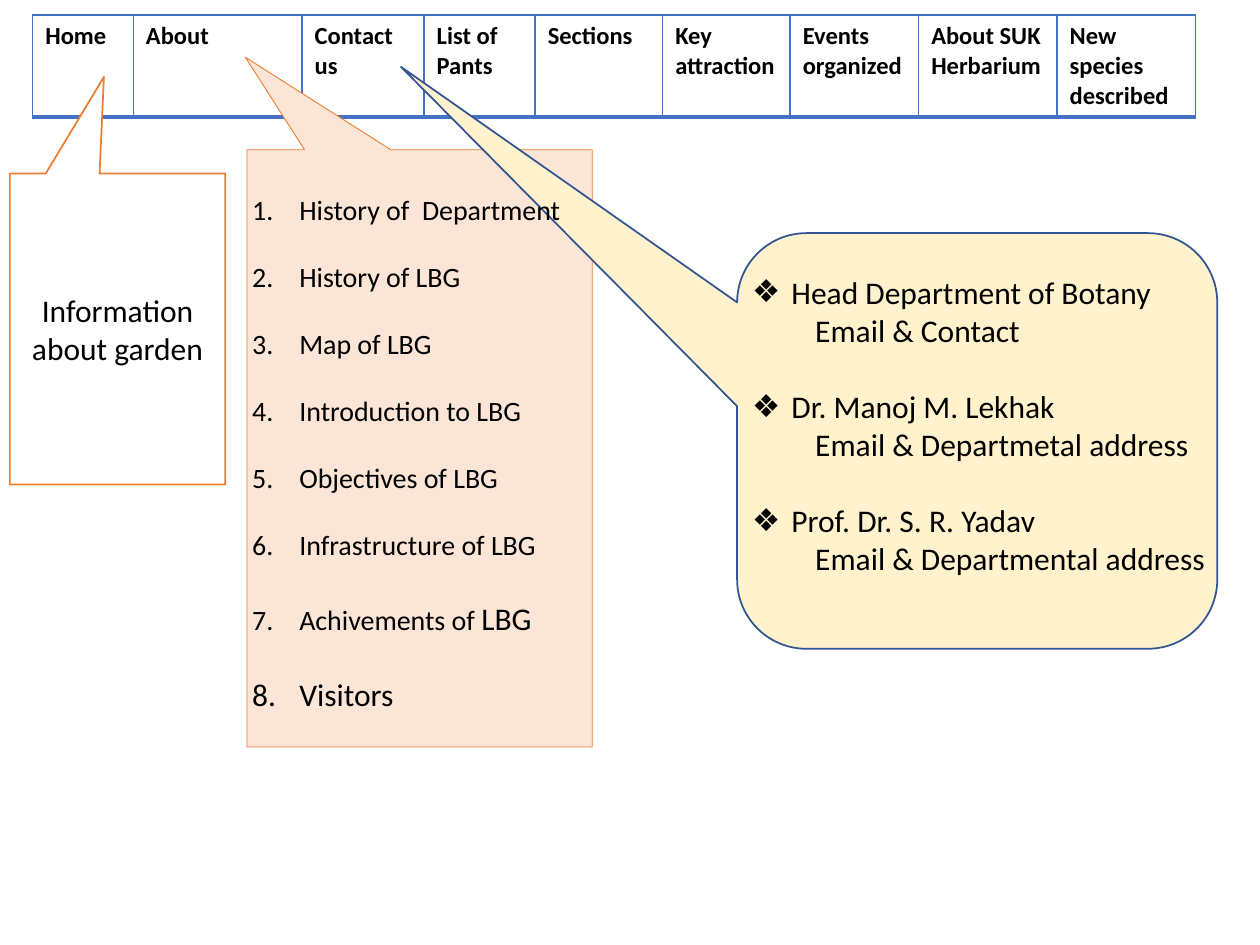
import lxml.etree
import pptx
import pptx.dml.color
import pptx.enum.shapes
import pptx.enum.text
import pptx.oxml.ns
import pptx.util

Cm, Pt = pptx.util.Cm, pptx.util.Pt
RGB = pptx.dml.color.RGBColor.from_string
qn = pptx.oxml.ns.qn
SHAPE = pptx.enum.shapes.MSO_SHAPE
ALIGN = pptx.enum.text.PP_ALIGN
ANCHOR = pptx.enum.text.MSO_ANCHOR

THEME = {
    "font": "Calibri", "text": "000000", "grid": "4472C4",
    "menu": 14, "list": 16, "body": 18,
}

# Menu entry and column width in cm
MENU = [
    ("Home", 2.03), ("About", 3.4), ("Contact us", 2.46),
    ("List of Pants", 2.24), ("Sections", 2.57), ("Key attraction", 2.57),
    ("Events organized", 2.59), ("About SUK Herbarium", 2.79),
    ("New species described", 2.79),
]
MENU_AT = (0.66, 0.3)
MENU_HEIGHT = 2.03

# Each entry is a list of (text, size) runs
ABOUT = [[(text, THEME["list"])] for text in (
    "History of  Department", "History of LBG", "Map of LBG",
    "Introduction to LBG", "Objectives of LBG", "Infrastructure of LBG")]
ABOUT += [
    [("Achivements of ", THEME["list"]), ("LBG", THEME["body"])],
    [("Visitors", THEME["body"])],
]
CONTACTS = [
    ("Head Department of Botany", "Email & Contact"),
    ("Dr. Manoj M. Lekhak", "Email & Departmetal address"),
    ("Prof. Dr. S. R. Yadav", "Email & Departmental address"),
]
HOME = "Information about garden"

CALLOUTS = {
    "about": dict(kind=SHAPE.RECTANGULAR_CALLOUT, at=(4.98, 3.02, 6.96, 12.04),
                  adj=(-0.505, -0.655), fill="FBE5D6", line="ED7D31", width=0.5),
    "contact": dict(kind=SHAPE.ROUNDED_RECTANGULAR_CALLOUT, at=(14.86, 4.7, 9.68, 8.38),
                    adj=(-1.2, -0.9, 0.167), fill="FFF2CC", line="325491", width=1),
    "home": dict(kind=SHAPE.RECTANGULAR_CALLOUT, at=(0.2, 3.5, 4.34, 6.27),
                 adj=(-0.063, -0.811), fill="FFFFFF", line="ED7D31", width=1),
}
ABOUT_AT = (4.83, 3.07, 7.11, 11.53)
CONTACTS_AT = (14.91, 5.38, 9.91, 7.19)


def add_run(p, text, size, bold=False):
    r = p.add_run()
    r.text = text
    values = {"name": THEME["font"], "size": Pt(size), "bold": bold}
    for name, value in values.items():
        setattr(r.font, name, value)
    r.font.color.rgb = RGB(THEME["text"])


def add_menu(s):
    shape = s.shapes.add_table(
        1, len(MENU), *map(Cm, MENU_AT),
        Cm(sum(width for _, width in MENU)), Cm(MENU_HEIGHT))
    table = shape.table
    table.rows[0].height = Cm(MENU_HEIGHT)
    for i, (text, width) in enumerate(MENU):
        table.columns[i].width = Cm(width)
        cell = table.cell(0, i)
        add_run(cell.text_frame.paragraphs[0], text, THEME["menu"], bold=True)
        add_borders(cell, {"L": 1, "R": 1, "T": 1, "B": 2})
        cell.fill.background()


def add_borders(cell, widths):
    tcPr = cell._tc.get_or_add_tcPr()
    for side, width in widths.items():
        ln = lxml.etree.SubElement(tcPr, qn(f"a:ln{side}"), w=str(Pt(width)))
        fill = lxml.etree.SubElement(ln, qn("a:solidFill"))
        lxml.etree.SubElement(fill, qn("a:srgbClr"), val=THEME["grid"])


def add_callout(s, kind, at, adj, fill, line, width):
    sp = s.shapes.add_shape(kind, *map(Cm, at))
    sp.shadow.inherit = False
    for i, value in enumerate(adj):
        sp.adjustments[i] = value
    sp.fill.solid()
    sp.fill.fore_color.rgb = RGB(fill)
    sp.line.color.rgb = RGB(line)
    sp.line.width = Pt(width)
    return sp


def place_list(sp, at):
    """Move a body placeholder, bring it to the front and return its text frame."""
    sp.left, sp.top, sp.width, sp.height = map(Cm, at)
    sp.element.getparent().append(sp.element)
    tf = sp.text_frame
    tf.word_wrap = True
    tf.auto_size = pptx.enum.text.MSO_AUTO_SIZE.NONE
    tf.vertical_anchor = ANCHOR.TOP
    return tf


def add_item(tf, runs, bullet, margin, indent, **fmt):
    """Add a paragraph; bullet is a tag name with its attributes."""
    first = tf.paragraphs[0]
    p = tf.add_paragraph() if first.runs else first
    for name, value in ({"space_before": Pt(0)} | fmt).items():
        setattr(p, name, value)
    pPr = p._p.get_or_add_pPr()
    pPr.set("marL", str(Cm(margin)))
    pPr.set("indent", str(Cm(indent)))
    tag, attributes = bullet
    lxml.etree.SubElement(pPr, qn(tag), **attributes)
    for text, size in runs:
        add_run(p, text, size)


def fill_about(tf):
    for runs in ABOUT:
        add_item(tf, runs, ("a:buAutoNum", {"type": "arabicPeriod"}),
                 0.95, -0.95, line_spacing=2.0)


def fill_contacts(tf):
    size = THEME["body"]
    for i, (name, details) in enumerate(CONTACTS):
        add_item(tf, [(name, size)], ("a:buChar", {"char": "❖"}), 0.79, -0.79,
                 alignment=ALIGN.JUSTIFY, space_before=Pt(22 if i else 0))
        add_item(tf, [(details, size)], ("a:buNone", {}), 1.27, 0,
                 alignment=ALIGN.JUSTIFY)


def main():
    prs = pptx.Presentation()
    prs.slide_width, prs.slide_height = Cm(25.4), Cm(19.05)
    s = prs.slides.add_slide(prs.slide_layouts.get_by_name("Two Content"))
    title, about, contacts = list(s.placeholders)[:3]
    title.element.getparent().remove(title.element)

    add_menu(s)
    for name in ("about", "contact"):
        add_callout(s, **CALLOUTS[name])
    fill_contacts(place_list(contacts, CONTACTS_AT))
    fill_about(place_list(about, ABOUT_AT))

    tf = add_callout(s, **CALLOUTS["home"]).text_frame
    tf.word_wrap = True
    tf.vertical_anchor = ANCHOR.MIDDLE
    p = tf.paragraphs[0]
    p.alignment = ALIGN.CENTER
    add_run(p, HOME, THEME["body"])

    prs.save("out.pptx")


if __name__ == "__main__":
    main()
